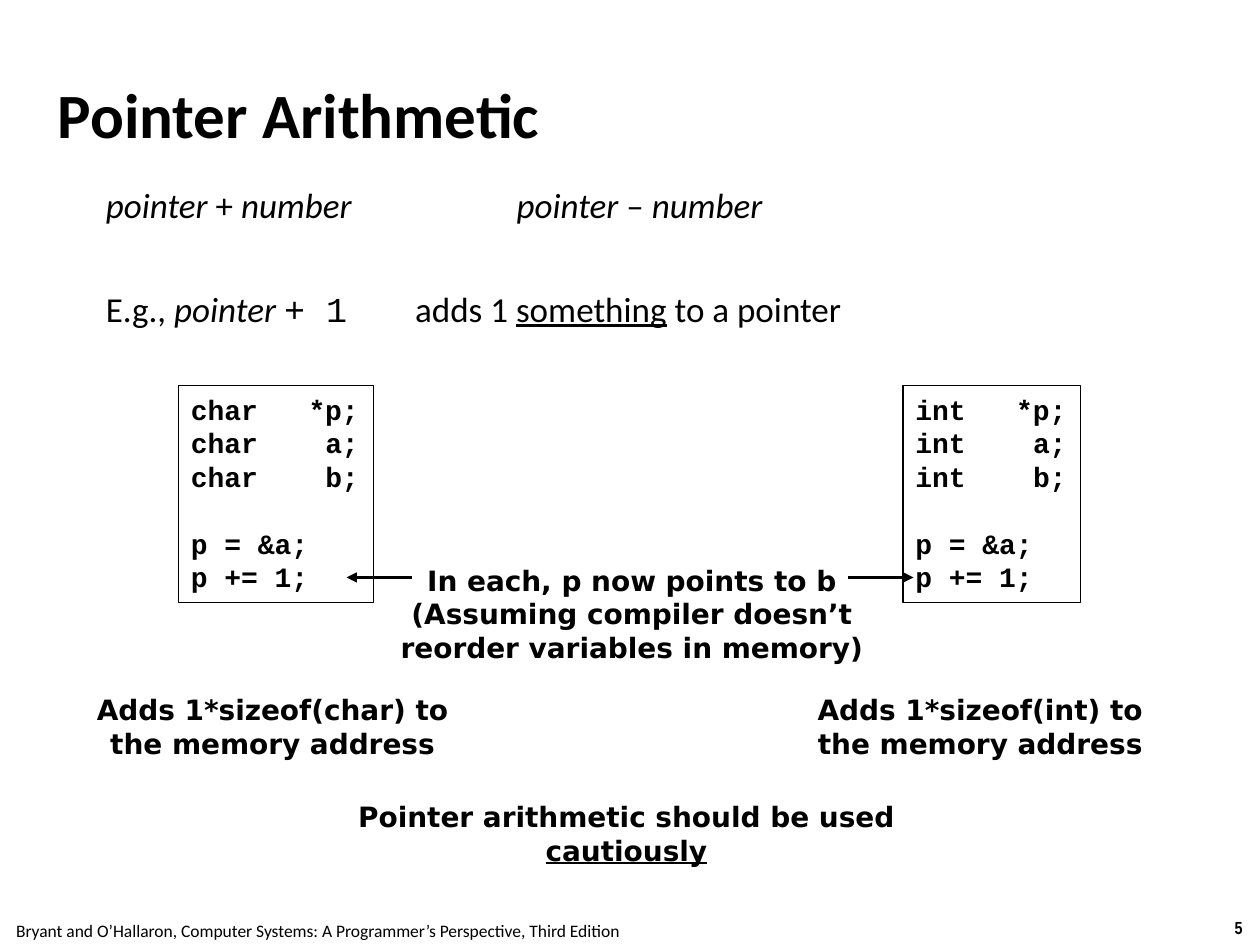
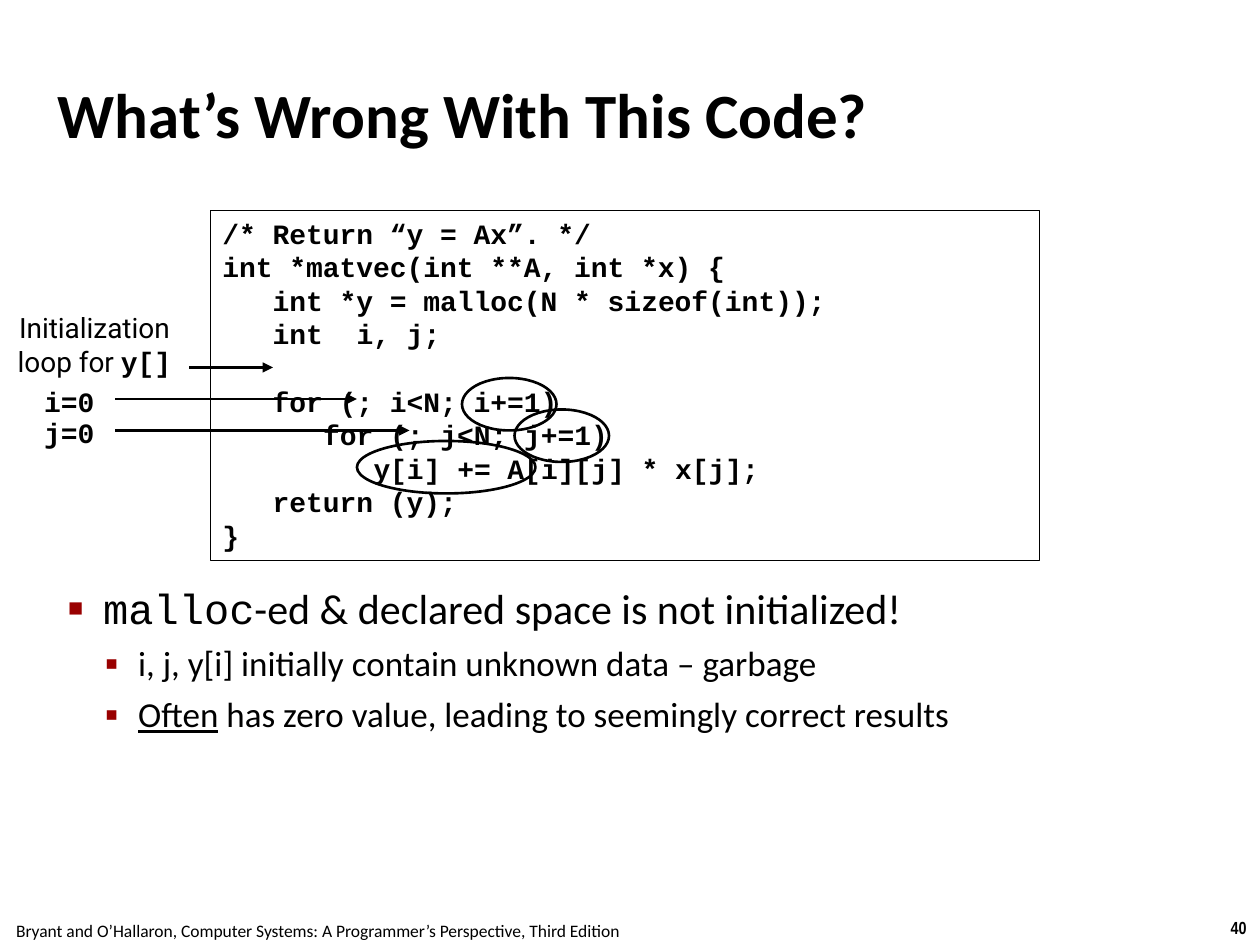
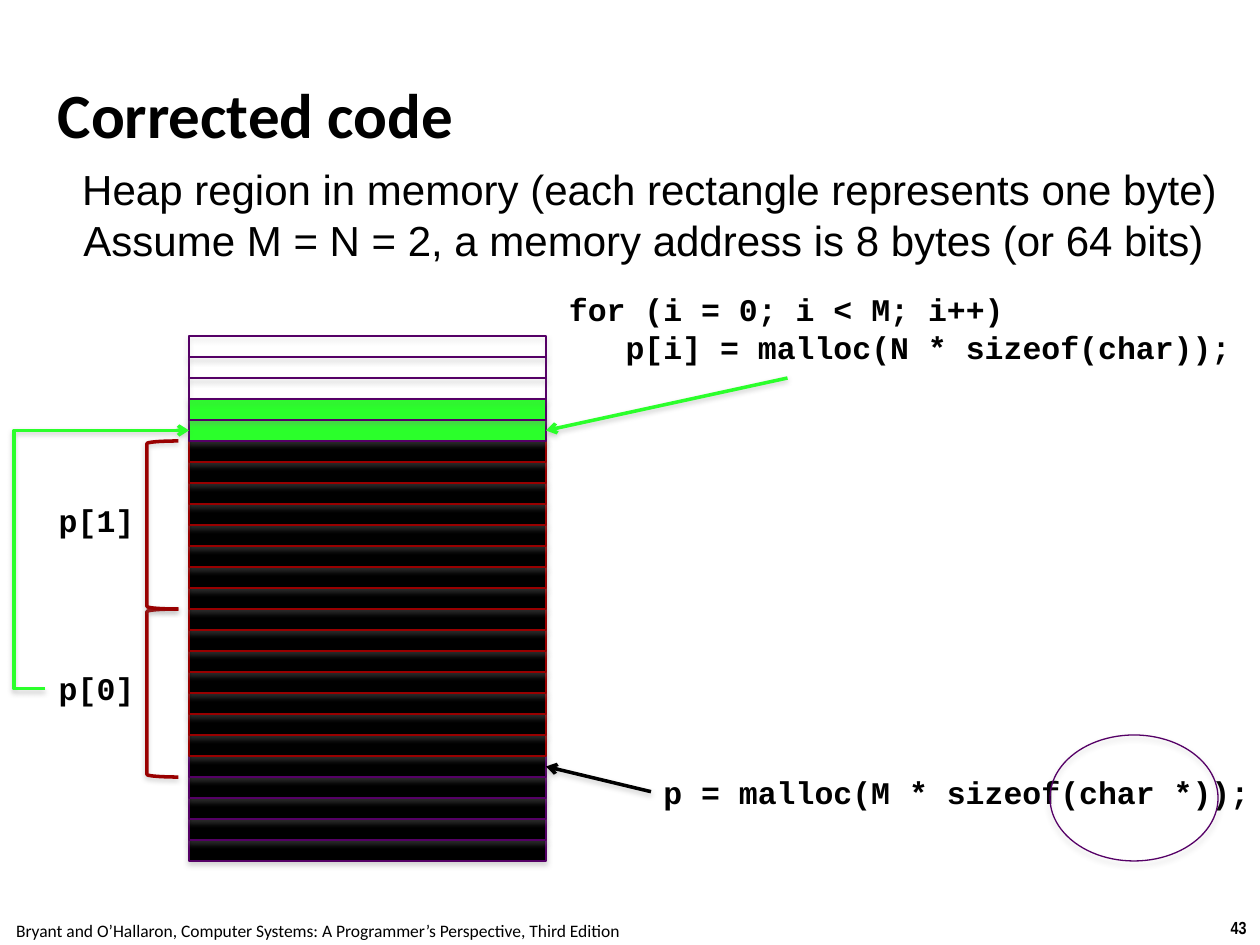
from dataclasses import dataclass, field, replace
from lxml.etree import SubElement
from pptx import Presentation
from pptx.dml.color import RGBColor
from pptx.enum.shapes import MSO_CONNECTOR, MSO_SHAPE
from pptx.enum.text import MSO_ANCHOR, MSO_AUTO_SIZE, PP_ALIGN
from pptx.oxml.ns import qn
from pptx.util import Pt


# Theme
@dataclass(frozen=True)
class Theme:
    black: str = "000000"
    red: str = "990000"
    green: str = "2BFF2B"
    purple: str = "550066"
    shadow: str = "808080"
    code_line: float = 19.2
    code_column: float = 9.6


@dataclass(frozen=True)
class Style:
    font: str
    size: float
    bold: bool = False
    align: PP_ALIGN = PP_ALIGN.LEFT


@dataclass
class Para:
    spans: list
    before: float = 0
    stops: list = field(default_factory=list)
    bullet: tuple = ()


THEME = Theme()
CENTER = PP_ALIGN.CENTER
TITLE = Style("Calibri", 36, True)
BODY = Style("Calibri", 20)
CODE = Style("Courier New", 16, True)
CODE_LABEL = replace(CODE, align=CENTER)
BIG_CODE = replace(CODE, size=18)
BIG_LABEL = replace(BIG_CODE, align=CENTER)
CALLOUT = Style("DejaVu Sans", 16, True, CENTER)
SIDE_NOTE = Style("Roboto", 16, align=CENTER)
HEAP_NOTE = Style("Arial", 24, align=CENTER)
FOOTER = Style("Calibri", 10, align=CENTER)
NUMBER = Style("Arial Narrow", 10, True, CENTER)

# Shared content
FOOTER_TEXT = "Bryant and O’Hallaron, Computer Systems: A Programmer’s Perspective, Third Edition"
ITALIC, UNDERLINE = {"italic": True}, {"underline": True}
MONO = {"name": "Courier New"}

# Pointer arithmetic: a code line is its text and the columns of its tabs
FORMS = [
    Para([("pointer", ITALIC), " + ", ("number\tpointer", ITALIC), " – ", ("number", ITALIC)],
         5, [234.7]),
    Para(["E.g., ", ("pointer ", ITALIC), ("+ 1", MONO), "\tadds 1 ",
          ("something", UNDERLINE), " to a pointer"], 35, [176.7]),
]
# type name, code box left and width, note left and width, arrow start and end
POINTER_TYPES = [
    ("char", 102, 111.6, 42, 227.5, 235.5, 198),
    ("int", 516, 101.5, 450, 220.3, 484.5, 522),
]
POINTS_TO_B = [Para(["In each, p now points to b"]),
               Para(["(Assuming compiler doesn’t reorder variables in memory)"])]
CAUTION = [Para(["Pointer arithmetic should be used ", ("cautiously", UNDERLINE)])]

# What's wrong with this code
MATVEC = [
    ("/* Return “y = Ax”. */", []),
    ("int *matvec(int **A, int *x) {", []),
    ("\tint *y = malloc(N * sizeof(int));", [3]),
    ("\tint\ti, j;", [3, 8]),
    None,
    ("\tfor (; i<N; i+=1)", [3]),
    ("\tfor (; j<N; j+=1)", [6]),
    ("\ty[i] += A[i][j] * x[j];", [9]),
    ("\treturn (y);", [3]),
    ("}", []),
]
BULLET, SUB_BULLET = ("■", 60, 20, 20), ("▪", 110, 40, 19)
FINDINGS = [
    Para([("malloc", {"name": "Courier New", "size": Pt(24)}),
          ("-ed & declared space is not initialized!", {"size": Pt(24)})], 6, bullet=BULLET),
    Para(["i, j, y[i] initially contain unknown data – garbage"], 5, bullet=SUB_BULLET),
    Para([("Often", UNDERLINE), " has zero value, leading to seemingly correct results"],
         5, bullet=SUB_BULLET),
]
INIT_NOTE = [Para(["Initialization loop for ", ("y[]", {"name": "Courier New", "bold": True})])]
START_VALUES = [("i=0", 216), ("j=0", 234)]
FIX_ARROWS = [(66, 234, 246), (66, 204, 228), (108, 156, 210)]  # start, end, height
MARKS = [(204, 252, 102), (294, 234, 54), (264, 216, 54)]  # left, top, width

# Corrected code
HEAP_TEXT = [Para(["Heap region in memory (each rectangle represents one byte)"]),
             Para(["Assume M = N = 2, a memory address is 8 bytes (or 64 bits) "])]
HEAP_ROWS = ([(None, THEME.purple)] * 3 + [(THEME.green, THEME.purple)] * 2
             + [(THEME.black, THEME.red)] * 15 + [(THEME.black, THEME.purple)] * 5)
FILL_LOOP = [("for (i = 0; i < M; i++)", []), ("\tp[i] = malloc(N * sizeof(char));", [3])]
POINTERS = [("p[0]", 378.7, 348), ("p[1]", 283, 252)]  # name, label top, bracket top


# Text
def color(value):
    return RGBColor.from_string(value)


def code_paras(lines, size=16):
    column = THEME.code_column * size / 16
    paras, before = [], 0
    for line in lines:
        if line is None:
            before = THEME.code_line
            continue
        text, columns = line
        paras.append(Para([text], before, [c * column for c in columns]))
        before = 0
    return paras


def format_para(para, source):
    para.space_before = Pt(source.before)
    props = para._p.get_or_add_pPr()
    if source.bullet:
        char, percent, margin, hanging = source.bullet
        props.set("marL", str(Pt(margin)))
        props.set("indent", str(-Pt(hanging)))
        SubElement(SubElement(props, qn("a:buClr")), qn("a:srgbClr"), val=THEME.red)
        SubElement(props, qn("a:buSzPct"), val=str(percent * 1000))
        SubElement(props, qn("a:buFont"), typeface="Arial")
        SubElement(props, qn("a:buChar"), char=char)
    if source.stops:
        tabs = SubElement(props, qn("a:tabLst"))
        for stop in source.stops:
            SubElement(tabs, qn("a:tab"), pos=str(Pt(stop)), algn="l")


def write(box, paras, style, wrap=True, grow=True, anchor=MSO_ANCHOR.TOP):
    frame = box.text_frame
    frame.word_wrap = wrap
    frame.auto_size = MSO_AUTO_SIZE.SHAPE_TO_FIT_TEXT if grow else MSO_AUTO_SIZE.NONE
    frame.vertical_anchor = anchor
    for index, source in enumerate(paras):
        para = frame.add_paragraph() if index else frame.paragraphs[0]
        para.alignment = style.align
        format_para(para, source)
        for item in source.spans:
            text, changes = (item, {}) if isinstance(item, str) else item
            span = para.add_run()
            span.text = text
            font = span.font
            font.name, font.size, font.bold = style.font, Pt(style.size), style.bold
            font.color.rgb = color(THEME.black)
            for name, value in changes.items():
                setattr(font, name, value)


def add_text(page, place, paras, style, **options):
    box = page.shapes.add_textbox(*map(Pt, place))
    write(box, [Para([paras])] if isinstance(paras, str) else paras, style, **options)
    return box


def add_placed_text(page, place, paras, style, left=3, anchor=MSO_ANCHOR.TOP):
    box = add_text(page, place, paras, style, grow=False, anchor=anchor)
    frame = box.text_frame
    frame.margin_left = Pt(left)
    frame.margin_right = frame.margin_top = frame.margin_bottom = Pt(3)


# Shapes and lines
def add_shadow(effects, alpha, distance):
    shadow = SubElement(effects, qn("a:outerShdw"), blurRad=str(Pt(3.1)),
                        dist=str(Pt(distance)), dir="5400000", rotWithShape="0")
    tint = SubElement(shadow, qn("a:srgbClr"), val=THEME.shadow)
    SubElement(tint, qn("a:alpha"), val=str(alpha * 1000))


def add_outline(page, kind, place, line, width, fill=None, shadow=None):
    shape = page.shapes.add_shape(kind, *map(Pt, place))
    if fill:
        shape.fill.solid()
        shape.fill.fore_color.rgb = color(fill)
    else:
        shape.fill.background()
    shape.line.color.rgb = color(line)
    shape.line.width = Pt(width)
    shape.shadow.inherit = False
    if shadow:
        add_shadow(shape._element.spPr.find(qn("a:effectLst")), *shadow)
    return shape


def add_arrow(page, start, end, line=THEME.black, width=1.25, head="triangle",
              kind=MSO_CONNECTOR.STRAIGHT, shadow=None):
    arrow = page.shapes.add_connector(kind, *map(Pt, start + end))
    arrow.line.color.rgb = color(line)
    arrow.line.width = Pt(width)
    SubElement(arrow.line._get_or_add_ln(), qn("a:tailEnd"), type=head)
    effects = SubElement(arrow._element.spPr, qn("a:effectLst"))
    if shadow:
        add_shadow(effects, *shadow)
    return arrow


def add_code_box(page, place, lines, line_width, wrap):
    box = add_outline(page, MSO_SHAPE.RECTANGLE, place, THEME.black, line_width)
    write(box, code_paras(lines), CODE, wrap=wrap)


def add_page(deck, title, number):
    page = deck.slides.add_slide(deck.slide_layouts[6])
    add_text(page, (695.5, 520.5, 24.5, 19.4), number, NUMBER, wrap=False)
    add_text(page, (-1.4, 522, 365.8, 19.4), FOOTER_TEXT, FOOTER, wrap=False)
    add_placed_text(page, (30, 20, 660, 90), title, TITLE, anchor=MSO_ANCHOR.MIDDLE)
    return page


# Pages
def build_arithmetic(deck):
    page = add_page(deck, "Pointer Arithmetic", "5")
    add_placed_text(page, (36, 102, 648, 123), FORMS, BODY, left=24.5)
    for name, left, width, note_left, note_width, start, end in POINTER_TYPES:
        column = len(name) + 3
        lines = [(f"{name}\t*p;", [column]), (f"{name}\ta;", [column + 1]),
                 (f"{name}\tb;", [column + 1]), None, ("p = &a;", []), ("p += 1;", [])]
        add_code_box(page, (left, 220.5, width, 124), lines, 0.75, False)
        add_text(page, (note_left, 392.4, note_width, 46),
                 f"Adds 1*sizeof({name}) to the memory address", CALLOUT)
        add_arrow(page, (start, 330), (end, 330))
    add_text(page, (212.4, 318.2, 297.4, 65), POINTS_TO_B, CALLOUT)
    add_text(page, (152, 453.6, 412, 27), CAUTION, CALLOUT)


def build_wrong_code(deck):
    page = add_page(deck, "What’s Wrong With This Code?", "40")
    add_placed_text(page, (36, 330, 648, 152.6), FINDINGS, BODY)
    add_code_box(page, (120, 120, 474, 200), MATVEC, 0.25, True)
    for text, top in START_VALUES:
        add_text(page, (18, top, 43.2, 26.6), text, CODE_LABEL, wrap=False)
    for start, end, height in FIX_ARROWS:
        add_arrow(page, (start, height), (end, height))
    add_text(page, (0, 174, 108, 46), INIT_NOTE, SIDE_NOTE)
    for left, top, width in MARKS:
        add_outline(page, MSO_SHAPE.OVAL, (left, top, width, 30), THEME.black, 1.5)


def build_corrected_code(deck):
    page = add_page(deck, "Corrected code", "43")
    shape_shadow, line_shadow = (35, 1.8), (38, 1.6)
    add_text(page, (36, 90, 670.3, 65.5), HEAP_TEXT, HEAP_NOTE, wrap=False)

    # Heap bytes, stacked from the bottom up
    cells = {}
    for row, (fill, line) in reversed(list(enumerate(HEAP_ROWS))):
        cells[row] = add_outline(page, MSO_SHAPE.RECTANGLE, (108, 192 + 12 * row, 204, 12),
                                 line, 0.75, fill, shape_shadow)

    # Allocations and the bytes they return
    pen = dict(width=2, head="arrow", shadow=line_shadow)
    call = add_text(page, (372, 438, 352.8, 28.8), "p = malloc(M * sizeof(char *));",
                    BIG_CODE, wrap=False)
    arrow = add_arrow(page, (372, 452.4), (312, 438), **pen)
    arrow.begin_connect(call, 1)
    arrow.end_connect(cells[20], 3)
    add_text(page, (318, 162, 420, 51), code_paras(FILL_LOOP, BIG_CODE.size), BIG_CODE)
    arrow = add_arrow(page, (450, 216), (312, 246), THEME.green, **pen)
    arrow.end_connect(cells[4], 3)
    add_outline(page, MSO_SHAPE.OVAL, (600, 420, 96, 72), THEME.purple, 0.75,
                shadow=shape_shadow)

    # Pointers and the eight bytes each one takes
    for name, label_top, bracket_top in POINTERS:
        add_text(page, (26, label_top, 58.3, 28.8), name, BIG_LABEL, wrap=False)
        bracket = add_outline(page, MSO_SHAPE.LEFT_BRACKET, (84, bracket_top, 18, 96),
                              THEME.red, 2, shadow=line_shadow)
        bracket.adjustments[0] = 0.08
    link = add_arrow(page, (26, 393.6), (108, 246), THEME.green,
                     kind=MSO_CONNECTOR.ELBOW, **pen)
    geometry = link._element.spPr.find(qn("a:prstGeom"))
    guides = geometry.find(qn("a:avLst"))
    if guides is None:
        guides = SubElement(geometry, qn("a:avLst"))
    SubElement(guides, qn("a:gd"), name="adj1", fmla="val -21900")


def main():
    deck = Presentation()
    deck.slide_width, deck.slide_height = Pt(720), Pt(540)
    build_arithmetic(deck)
    build_wrong_code(deck)
    build_corrected_code(deck)
    deck.save("out.pptx")


if __name__ == "__main__":
    main()
